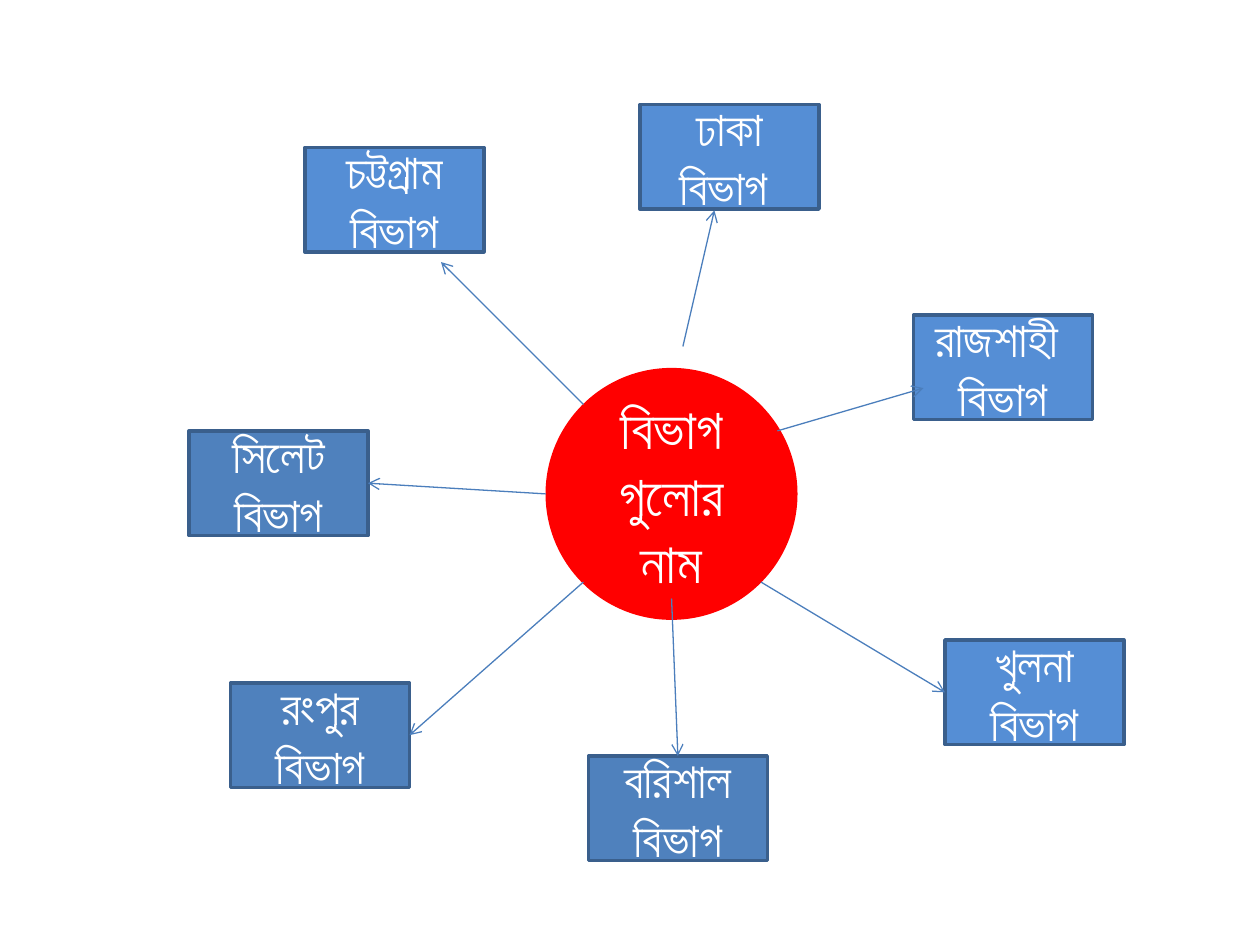
from lxml.etree import SubElement
from pptx import Presentation
from pptx.dml.color import RGBColor
from pptx.enum.shapes import MSO_CONNECTOR, MSO_SHAPE
from pptx.enum.text import MSO_ANCHOR, PP_ALIGN
from pptx.oxml.ns import qn
from pptx.util import Inches, Pt

RED = RGBColor(0xFF, 0x00, 0x00)
LIGHT_BLUE = RGBColor(0x55, 0x8E, 0xD5)
BLUE = RGBColor(0x4F, 0x81, 0xBD)
BORDER = RGBColor(0x3A, 0x5F, 0x8C)
ARROW = RGBColor(0x4B, 0x7E, 0xBC)
WHITE = RGBColor(0xFF, 0xFF, 0xFF)
FONT = "Roboto"
BOX_W, BOX_H = 1.42, 0.83
TOP, LEFT, RIGHT = 0, 1, 3

HUB_TEXT = "বিভাগ গুলোর\nনাম"
HUB = (4.33, 2.92, 2, 2)

# text, box corner, fill, arrow start, arrow end (a point or a box side)
DIVISIONS = [
    ("ঢাকা বিভাগ ", (5.08, 0.83), LIGHT_BLUE, (5.42, 2.75), (5.67, 1.67)),
    ("সিলেট\nবিভাগ", (1.5, 3.42), BLUE, (4.33, 3.92), RIGHT),
    ("রংপুর\nবিভাগ", (1.83, 5.42), BLUE, (4.63, 4.62), RIGHT),
    ("বরিশাল\nবিভাগ", (4.67, 6), BLUE, (5.33, 4.75), TOP),
    ("খুলনা\nবিভাগ", (7.5, 5.08), LIGHT_BLUE, (6.04, 4.62), LEFT),
    ("রাজশাহী \nবিভাগ", (7.25, 2.5), LIGHT_BLUE, (6.17, 3.42), (7.33, 3.08)),
    ("চট্টগ্রাম\nবিভাগ", (2.42, 1.17), LIGHT_BLUE, (4.63, 3.21), (3.5, 2.08)),
]


def add_label(s, kind, box, text, fill, size):
    sp = s.shapes.add_shape(kind, *map(Inches, box))
    sp.shadow.inherit = False
    sp.fill.solid()
    sp.fill.fore_color.rgb = fill
    tf = sp.text_frame
    tf.word_wrap = True
    tf.vertical_anchor = MSO_ANCHOR.MIDDLE
    tf.text = text
    for p in tf.paragraphs:
        p.alignment = PP_ALIGN.CENTER
        for r in p.runs:
            r.font.name = FONT
            r.font.size = Pt(size)
            r.font.color.rgb = WHITE
    return sp


def add_arrow(s, start, end, box):
    joined = isinstance(end, int)
    target = start if joined else end
    line = s.shapes.add_connector(
        MSO_CONNECTOR.STRAIGHT, *map(Inches, start + target))
    if joined:
        line.end_connect(box, end)
    line.line.color.rgb = ARROW
    line.line.width = Pt(0.75)
    SubElement(line.line._get_or_add_ln(), qn("a:tailEnd"), type="arrow")
    SubElement(line._element.spPr, qn("a:effectLst"))


def main():
    prs = Presentation()
    prs.slide_width, prs.slide_height = Inches(10), Inches(7.5)
    s = prs.slides.add_slide(prs.slide_layouts[6])

    hub = add_label(s, MSO_SHAPE.OVAL, HUB, HUB_TEXT, RED, 32)
    hub.line.fill.background()

    boxes = []
    for text, corner, fill, start, end in DIVISIONS:
        box = add_label(s, MSO_SHAPE.RECTANGLE, corner + (BOX_W, BOX_H),
                        text, fill, 28)
        box.line.color.rgb = BORDER
        box.line.width = Pt(2)
        boxes.append(box)

    for box, (text, corner, fill, start, end) in zip(boxes, DIVISIONS):
        add_arrow(s, start, end, box)

    prs.save("out.pptx")


if __name__ == "__main__":
    main()
